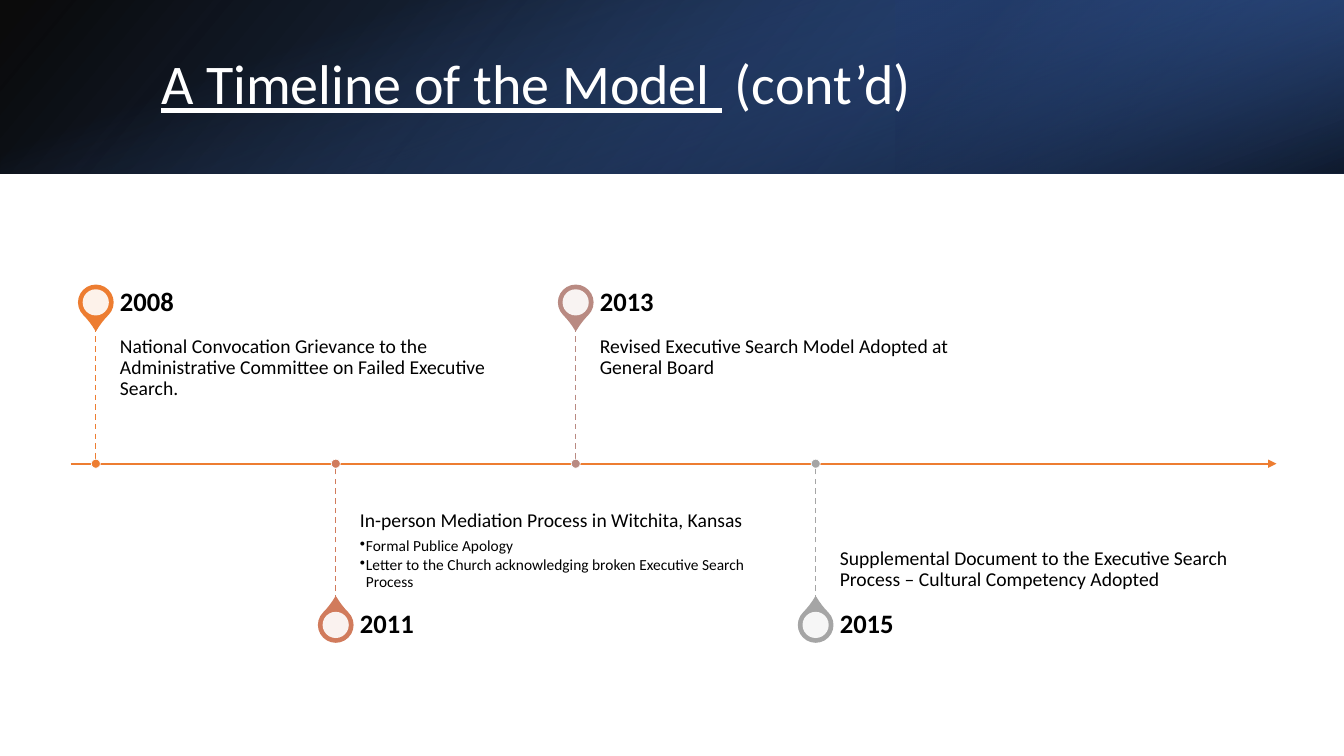
from lxml import etree
from pptx import Presentation
from pptx.dml.color import RGBColor
from pptx.enum.dml import MSO_LINE
from pptx.enum.shapes import MSO_CONNECTOR, MSO_SHAPE
from pptx.enum.text import MSO_ANCHOR
from pptx.oxml.ns import qn
from pptx.util import Inches, Pt

RECT, TEARDROP, OVAL = MSO_SHAPE.RECTANGLE, MSO_SHAPE.TEAR, MSO_SHAPE.OVAL
TOP, MIDDLE, BOTTOM = MSO_ANCHOR.TOP, MSO_ANCHOR.MIDDLE, MSO_ANCHOR.BOTTOM
STRAIGHT, DASH = MSO_CONNECTOR.STRAIGHT, MSO_LINE.DASH

FONT, WHITE, BLACK, ORANGE = "Calibri", "FFFFFF", "000000", "ED7D31"
TITLE = (("A Timeline of the Model ", True), (" (cont’d)", False))
EVENTS = (
    ("2008", ORANGE,
     "National Convocation Grievance to the Administrative Committee on Failed Executive Search.", ()),
    ("2011", "D17B5C", "In-person Mediation Process in Witchita, Kansas",
     ("Formal Publice Apology",
      "Letter to the Church acknowledging broken Executive Search Process")),
    ("2013", "B98A82", "Revised Executive Search Model Adopted at General Board", ()),
    ("2015", "A5A5A5",
     "Supplemental Document to the Executive Search Process – Cultural Competency Adopted", ()),
)

WIDTH, HEIGHT = 13.33, 7.5
BAND = 1.72
BAND_LAYERS = (
    ((0, 0, WIDTH, BAND), 0, True, 140, ((0, BLACK, 96), (100, "2F5597", 100))),
    ((WIDTH * 2 / 3, 0, WIDTH / 3, BAND), 180, True, 320,
     ((19, "203864", 68), (100, "4472C4", 79))),
    (((WIDTH - BAND) / 2, (BAND - WIDTH) / 2, BAND, WIDTH), 90, False, 340,
     ((23, "4472C4", 0), (99, BLACK, 74))),
)
AXIS_LEFT, AXIS_RIGHT, AXIS_Y = 0.7, 12.66, 4.6
FIRST_X, PITCH = 0.95, 2.38
STEM, YEAR_HEIGHT, TEXT_GAP, TEXT_WIDTH = 1.36, 0.48, 0.24, 3.97
PIN, DISC, DOT = 0.34, 0.26, 0.09

prs = Presentation()
prs.slide_width, prs.slide_height = Inches(WIDTH), Inches(HEIGHT)
slide = prs.slides.add_slide(prs.slide_layouts[6])


def rgb(code):
    return RGBColor.from_string(code)


def set_alpha(shape, percents):
    for color, percent in zip(shape.element.spPr.iter(qn("a:srgbClr")), percents):
        etree.SubElement(color, qn("a:alpha")).set("val", str(percent * 1000))


def add_preset(kind, box):
    shape = slide.shapes.add_shape(kind, *map(Inches, box))
    shape.shadow.inherit = False
    shape.line.fill.background()
    return shape


def add_round(kind, x, y, size, fill, outline=None, weight=0):
    shape = add_preset(kind, (x - size / 2, y - size / 2, size, size))
    shape.fill.solid()
    shape.fill.fore_color.rgb = rgb(fill)
    if outline:
        shape.line.color.rgb = rgb(outline)
        shape.line.width = Pt(weight)
    return shape


def add_line(start, end, color, weight):
    line = slide.shapes.add_connector(STRAIGHT, *map(Inches, start + end))
    line.line.color.rgb = rgb(color)
    line.line.width = Pt(weight)
    etree.SubElement(line.element.spPr, qn("a:effectLst"))
    return line


def add_text(box, anchor, insets):
    frame = slide.shapes.add_textbox(*map(Inches, box)).text_frame
    frame.word_wrap = True
    frame.vertical_anchor = anchor
    (frame.margin_left, frame.margin_top,
     frame.margin_right, frame.margin_bottom) = map(Inches, insets)
    return frame


def style(paragraph, size, color=BLACK, bold=False, after=0):
    paragraph.line_spacing = 0.9
    paragraph.space_after = Pt(after)
    paragraph.font.name = FONT
    paragraph.font.size = Pt(size)
    paragraph.font.bold = bold
    paragraph.font.color.rgb = rgb(color)


def add_bullet(frame, text):
    paragraph = frame.add_paragraph()
    paragraph.text = text
    style(paragraph, 11, after=1.65)
    font_props = paragraph.font._element
    props = font_props.getparent()
    props.set("marL", str(Inches(0.06)))
    props.set("indent", str(-Inches(0.06)))
    bullet = etree.Element(qn("a:buChar"))
    bullet.set("char", "•")
    font_props.addprevious(bullet)


def add_band_layer(box, rotation, flipped, angle, stops):
    layer = add_preset(RECT, box)
    layer.rotation = rotation
    if flipped:
        layer.element.spPr.find(qn("a:xfrm")).set("flipH", "1")
    layer.fill.gradient()
    layer.fill.gradient_angle = 360 - angle
    for stop, (position, color, _) in zip(layer.fill.gradient_stops, stops):
        stop.position = position / 100
        stop.color.rgb = rgb(color)
    set_alpha(layer, [alpha for _, _, alpha in stops])


def add_event(index, year, color, summary, details):
    x = FIRST_X + index * PITCH
    above = index % 2 == 0
    side = -1 if above else 1
    stem_end = AXIS_Y + side * STEM
    pin_y = stem_end + side * YEAR_HEIGHT / 2
    text_x = x + TEXT_GAP

    pin = add_round(TEARDROP, x, pin_y, PIN, color, color, 1)
    pin.adjustments[0] = 1.15
    pin.rotation = 135 if above else 315
    set_alpha(add_round(OVAL, x, pin_y, DISC, WHITE), [90])

    body = add_text((text_x, min(AXIS_Y, stem_end), TEXT_WIDTH, STEM),
                    TOP if above else BOTTOM,
                    (0, 0.1, 0.1, 0.15) if above else (0, 0.15, 0, 0.1))
    body.text = summary
    style(body.paragraphs[0], 14, after=4.9)
    for detail in details:
        add_bullet(body, detail)

    label = add_text((text_x, pin_y - YEAR_HEIGHT / 2, TEXT_WIDTH, YEAR_HEIGHT),
                     MIDDLE, (0, 0, 0.13, 0))
    label.text = year
    style(label.paragraphs[0], 19, bold=True)

    add_line((x, stem_end), (x, AXIS_Y), color, 1).line.dash_style = DASH
    add_round(OVAL, x, AXIS_Y, DOT, color, WHITE, 0.5)


for layer in BAND_LAYERS:
    add_band_layer(*layer)

heading = add_text((1.5, 0.38, 10.98, 0.96), MIDDLE, (0.1, 0.05, 0.1, 0.05)).paragraphs[0]
for words, underlined in TITLE:
    run = heading.add_run()
    run.text = words
    run.font.underline = underlined
style(heading, 40, WHITE)

axis = add_line((AXIS_LEFT, AXIS_Y), (AXIS_RIGHT, AXIS_Y), ORANGE, 1.5)
axis_outline = axis.element.spPr.find(qn("a:ln"))
etree.SubElement(axis_outline, qn("a:tailEnd")).set("type", "triangle")

for index, event in enumerate(EVENTS):
    add_event(index, *event)

prs.save("out.pptx")
